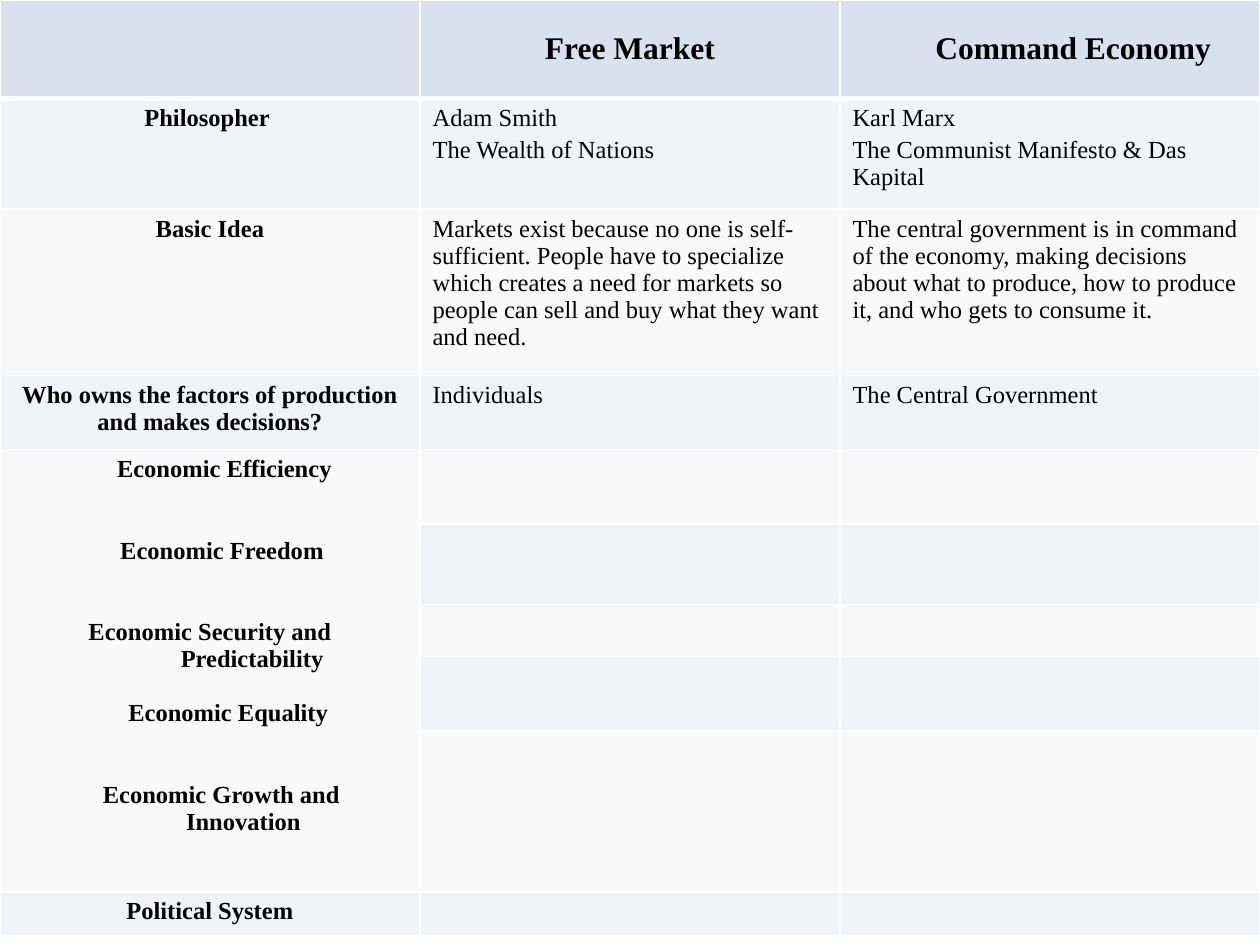
import dataclasses

import pptx
import pptx.dml.color
import pptx.enum.text
import pptx.oxml
import pptx.util
from pptx.oxml.ns import nsdecls
from pptx.util import Inches


@dataclasses.dataclass(frozen=True)
class Theme:
    font: str = "Times New Roman"
    head_size: int = 18
    body_size: int = 14
    text: str = "000000"
    rule: str = "FFFFFF"
    head_fill: str = "D8E1EC"
    bands: tuple = ("F0F4F8", "F8F9FB")


THEME = Theme()
COLUMN_WIDTH = 10 / 3
ROW_HEIGHTS = (0.78, 0.88, 1.32, 0.59, 0.59, 0.64, 0.41, 0.59, 1.28, 0.35)
CRITERIA_ROWS = (4, 8)
LINE = 15.5  # height of one body line, in points

# Cell text by row; each cell is a list of paragraphs
ROWS = {
    0: ([], ["Free Market"], ["Command Economy"]),
    1: (["Philosopher "],
        ["Adam Smith", "The Wealth of Nations"],
        ["Karl Marx", "The Communist Manifesto & Das Kapital"]),
    2: (["Basic Idea"],
        ["Markets exist because no one is self-sufficient. People have to "
         "specialize which creates a need for markets so people can sell and "
         "buy what they want and need."],
        ["The central government is in command of the economy, making "
         "decisions about what to produce, how to produce it, and who gets "
         "to consume it."]),
    3: (["Who owns the factors of production and makes decisions?"],
        ["Individuals"], ["The Central Government"]),
    9: (["Political System"], [], []),
}

# Text, left indent in inches, blank lines' worth of space before
CRITERIA = (
    ("Economic Efficiency", 0.23, 0),
    ("Economic Freedom", 0.19, 2),
    ("Economic Security and", 0, 2),
    ("Predictability", 0.67, 0),
    ("Economic Equality", 0.29, 1),
    ("Economic Growth and", 0.18, 2),
    ("Innovation", 0.53, 0),
)


def rgb(value):
    return pptx.dml.color.RGBColor.from_string(value)


def style_cell(cell, fill, top=1, bottom=1):
    """Set the rules of a cell, then its fill and insets."""
    tc_pr = cell._tc.get_or_add_tcPr()
    for side, width in (("L", 1), ("R", 1), ("T", top), ("B", bottom)):
        tc_pr.append(pptx.oxml.parse_xml(
            f'<a:ln{side} {nsdecls("a")} w="{pptx.util.Pt(width)}"><a:solidFill>'
            f'<a:srgbClr val="{THEME.rule}"/></a:solidFill></a:ln{side}>'))
    cell.fill.solid()
    cell.fill.fore_color.rgb = rgb(fill)
    insets = {"margin_left": 0.1, "margin_right": 0.1,
              "margin_top": 0.05, "margin_bottom": 0.05}
    for name, value in insets.items():
        setattr(cell, name, Inches(value))


def write_paragraph(tf, i, text, size, bold, centred, indent=0, before=0):
    p = tf.paragraphs[0] if i == 0 else tf.add_paragraph()
    align = pptx.enum.text.PP_ALIGN
    p.alignment = align.CENTER if centred else align.LEFT
    p.space_before = pptx.util.Pt(before)
    if indent:
        p._p.get_or_add_pPr().set("marL", str(Inches(indent)))
    r = p.add_run()
    r.text = text
    formats = {"name": THEME.font, "size": pptx.util.Pt(size), "bold": bold}
    for name, value in formats.items():
        setattr(r.font, name, value)
    r.font.color.rgb = rgb(THEME.text)


def write_cell(cell, row, col, paragraphs):
    head = row == 0
    if head:
        cell.vertical_anchor = pptx.enum.text.MSO_ANCHOR.MIDDLE
    size = THEME.head_size if head else THEME.body_size
    for i, text in enumerate(paragraphs):
        write_paragraph(cell.text_frame, i, text, size,
                        bold=head or col == 0, centred=head or col == 0,
                        indent=0.37 if head and col == 2 else 0,
                        before=2.8 if i else 0)
    if not paragraphs:
        # Keep empty cells from stretching their row
        end = cell.text_frame.paragraphs[0]._p.get_or_add_endParaRPr()
        end.set("sz", str(THEME.body_size * 100))


def add_comparison_table(s):
    width, height = Inches(3 * COLUMN_WIDTH), Inches(sum(ROW_HEIGHTS))
    table = s.shapes.add_table(len(ROW_HEIGHTS), 3, 0, 0, width, height).table
    for column in table.columns:
        column.width = Inches(COLUMN_WIDTH)
    for row, row_height in enumerate(ROW_HEIGHTS):
        table.rows[row].height = Inches(row_height)
        fill = THEME.bands[(row - 1) % 2] if row else THEME.head_fill
        for col, paragraphs in enumerate(ROWS.get(row, ([], [], []))):
            cell = table.cell(row, col)
            style_cell(cell, fill, top=3 if row == 1 else 1,
                       bottom=3 if row == 0 else 1)
            write_cell(cell, row, col, paragraphs)
    return table


def add_criteria(table):
    """Merge the criteria rows of the first column and list the criteria."""
    first, last = CRITERIA_ROWS
    cell = table.cell(first, 0)
    cell.merge(table.cell(last, 0))
    for i, (text, indent, lines) in enumerate(CRITERIA):
        write_paragraph(cell.text_frame, i, text, THEME.body_size, bold=True,
                        centred=True, indent=indent, before=lines * LINE)


def main():
    prs = pptx.Presentation()
    prs.slide_width, prs.slide_height = Inches(10), Inches(7.5)
    s = prs.slides.add_slide(prs.slide_layouts[6])
    # Comparison of the two economic systems
    table = add_comparison_table(s)
    add_criteria(table)
    prs.save("out.pptx")


if __name__ == "__main__":
    main()
